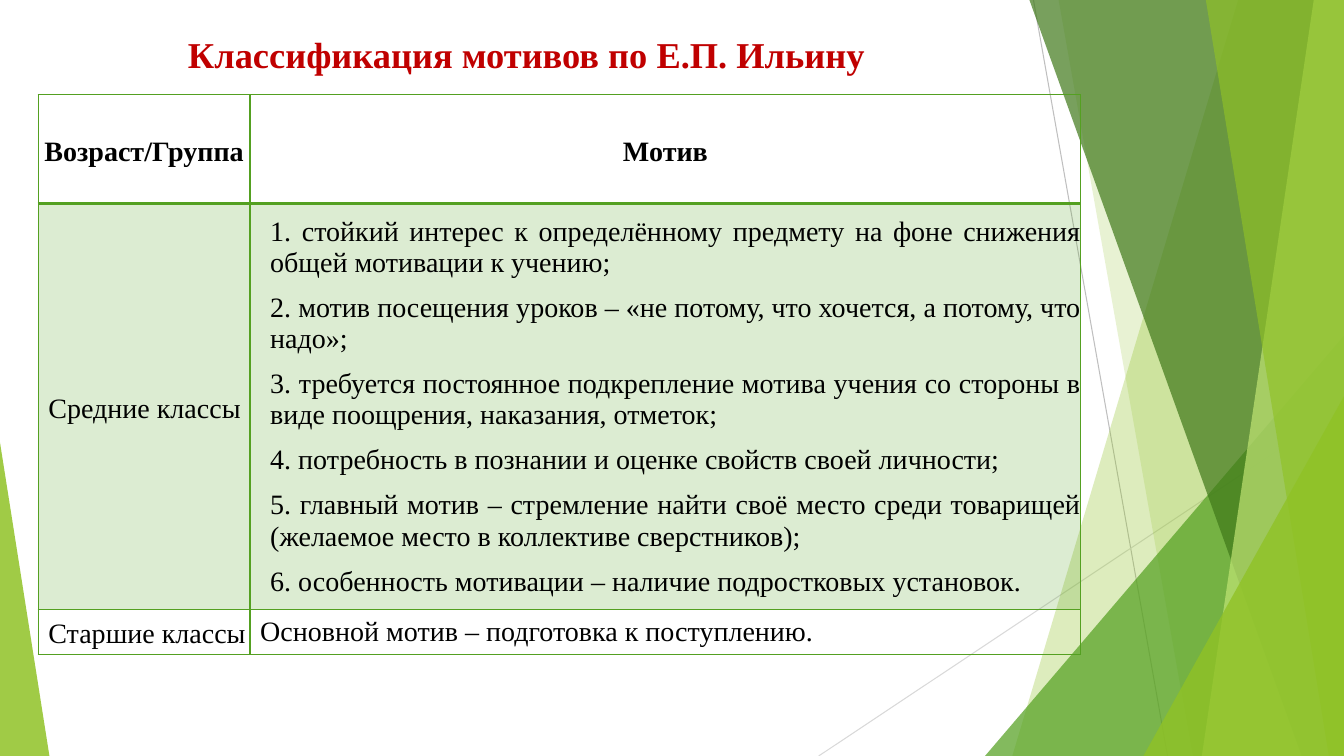
import lxml.etree
import pptx
import pptx.dml.color
import pptx.enum.shapes
import pptx.enum.text
import pptx.oxml.ns
import pptx.util

Inches = pptx.util.Inches
Pt = pptx.util.Pt
qn = pptx.oxml.ns.qn
ALIGN = pptx.enum.text.PP_ALIGN
ANCHOR = pptx.enum.text.MSO_ANCHOR

WIDTH, HEIGHT = 13.33, 7.5
FONT = "Times New Roman"
GREEN, LIME, DARK, PALE = "54A021", "90C226", "3F7819", "C0E474"
BLACK, RED = "000000", "C00000"

HEADING = "Классификация мотивов по Е.П. Ильину"
HEADERS = ["Возраст/Группа", "Мотив"]
GROUPS = [
    ("Средние классы", 0.2, [
        "1. стойкий интерес к определённому предмету на фоне снижения общей мотивации к учению;",
        "2. мотив посещения уроков – «не потому, что хочется, а потому, что надо»;",
        "3. требуется постоянное подкрепление мотива учения со стороны в виде поощрения, наказания, отметок;",
        "4. потребность в познании и оценке свойств своей личности;",
        "5. главный мотив – стремление найти своё место среди товарищей (желаемое место в коллективе сверстников);",
        "6. особенность мотивации – наличие подростковых установок.",
    ]),
    ("Старшие классы", 0.1, ["Основной мотив – подготовка к поступлению."]),
]
COLUMN_WIDTHS = [2.1, 8.24]
ROW_HEIGHTS = [1.08, 4.03, 0.44]

RAYS = [
    (10.25, 0, 11.58, HEIGHT, "BFBFBF"),
    (WIDTH, 4.03, 8.12, HEIGHT, "D9D9D9"),
]
FACETS = [
    ("band", 12.28, 10.04, LIME, 30),
    ("band", 10.5, 11.83, LIME, 20),
    ("corner", (9.77, 3.33, 3.56), 1, GREEN, 72),
    ("band", 10.21, 12.91, DARK, 70),
    ("band", 13.03, 11.92, PALE, 70),
    ("band", 11.96, 13.18, LIME, 65),
    ("corner", (11.34, 3.93, 1.99), 1, LIME, 80),
    ("corner", (0, 4.39, 0.49), 0, LIME, 85),
]


def rgb(value):
    return pptx.dml.color.RGBColor.from_string(value)


def paint(fill, element, color, opacity):
    fill.solid()
    fill.fore_color.rgb = rgb(color)
    tint = next(element.iter(qn("a:srgbClr")))
    lxml.etree.SubElement(tint, qn("a:alpha"), val=str(opacity * 1000))


def draw_ray(slide, x1, y1, x2, y2, color):
    ray = slide.shapes.add_connector(
        pptx.enum.shapes.MSO_CONNECTOR.STRAIGHT, Inches(x1), Inches(y1), Inches(x2), Inches(y2))
    ray.line.color.rgb = rgb(color)
    ray.line.width = Pt(0.75)
    lxml.etree.SubElement(ray._element.spPr, qn("a:effectLst"))


def draw_facet(slide, kind, place, end, color, opacity):
    if kind == "band":
        outline = slide.shapes.build_freeform(Inches(place), 0)
        corners = [(WIDTH, 0), (WIDTH, HEIGHT), (end, HEIGHT)]
        outline.add_line_segments([(Inches(x), Inches(y)) for x, y in corners], close=True)
        facet = outline.convert_to_shape()
    else:
        left, top, width = place
        facet = slide.shapes.add_shape(
            pptx.enum.shapes.MSO_SHAPE.ISOSCELES_TRIANGLE,
            Inches(left), Inches(top), Inches(width), Inches(HEIGHT - top))
        facet.adjustments[0] = end
    facet.shadow.inherit = False
    paint(facet.fill, facet._element.spPr, color, opacity)
    facet.line.fill.background()


def write(paragraph, text, size, color, bold, align):
    paragraph.alignment = align
    run = paragraph.add_run()
    run.text = text
    run.font.name = FONT
    run.font.size = Pt(size)
    run.font.bold = bold
    run.font.color.rgb = rgb(color)


def add_borders(cell, widths):
    properties = cell._tc.get_or_add_tcPr()
    for position, (side, width) in enumerate(widths.items()):
        border = lxml.etree.Element(qn("a:ln" + side), w=str(Pt(width)))
        solid = lxml.etree.SubElement(border, qn("a:solidFill"))
        lxml.etree.SubElement(solid, qn("a:srgbClr"), val=GREEN)
        properties.insert(position, border)


def fill_cell(cell, lines, align, indent=0, bold=False, spacing=None, shaded=False, top=1, bottom=1):
    cell.margin_left = cell.margin_right = cell.margin_top = cell.margin_bottom = 0
    cell.vertical_anchor = ANCHOR.MIDDLE
    frame = cell.text_frame
    for number, line in enumerate(lines):
        paragraph = frame.add_paragraph() if number else frame.paragraphs[0]
        write(paragraph, line, 20, BLACK, bold, align)
        paragraph.space_after = Pt(10)
        if spacing:
            paragraph.line_spacing = spacing
        if indent:
            layout = paragraph._p.get_or_add_pPr()
            layout.set("marL", str(Inches(indent)))
            layout.set("indent", "0")
    if shaded:
        paint(cell.fill, cell._tc.tcPr, GREEN, 20)
    else:
        cell.fill.background()
    add_borders(cell, {"L": 1, "R": 1, "T": top, "B": bottom})


def add_motives(slide):
    table = slide.shapes.add_table(
        len(ROW_HEIGHTS), len(COLUMN_WIDTHS), Inches(0.38), Inches(0.94),
        Inches(sum(COLUMN_WIDTHS)), Inches(sum(ROW_HEIGHTS))).table
    table.first_row = table.horz_banding = False
    for column, width in zip(table.columns, COLUMN_WIDTHS):
        column.width = Inches(width)
    for row, height in zip(table.rows, ROW_HEIGHTS):
        row.height = Inches(height)
    for column, header in enumerate(HEADERS):
        fill_cell(table.cell(0, column), [header], ALIGN.CENTER, bold=True, spacing=1.15, bottom=2)
    for row, (group, indent, motives) in enumerate(GROUPS, 1):
        first = row == 1
        edges = {"shaded": first, "top": 2 if first else 1}
        fill_cell(table.cell(row, 0), [group], ALIGN.LEFT, 0.1, spacing=1.15, **edges)
        fill_cell(table.cell(row, 1), motives, ALIGN.JUSTIFY, indent, **edges)


def main():
    deck = pptx.Presentation()
    deck.slide_width, deck.slide_height = Inches(WIDTH), Inches(HEIGHT)
    slide = deck.slides.add_slide(deck.slide_layouts[5])
    for ray in RAYS:
        draw_ray(slide, *ray)
    for facet in FACETS:
        draw_facet(slide, *facet)
    heading = slide.shapes.title
    heading.left, heading.top = Inches(1.38), Inches(0.25)
    heading.width, heading.height = Inches(7.69), Inches(0.57)
    heading.text_frame.vertical_anchor = ANCHOR.MIDDLE
    write(heading.text_frame.paragraphs[0], HEADING, 26, RED, True, ALIGN.CENTER)
    add_motives(slide)
    deck.save("out.pptx")


if __name__ == "__main__":
    main()
